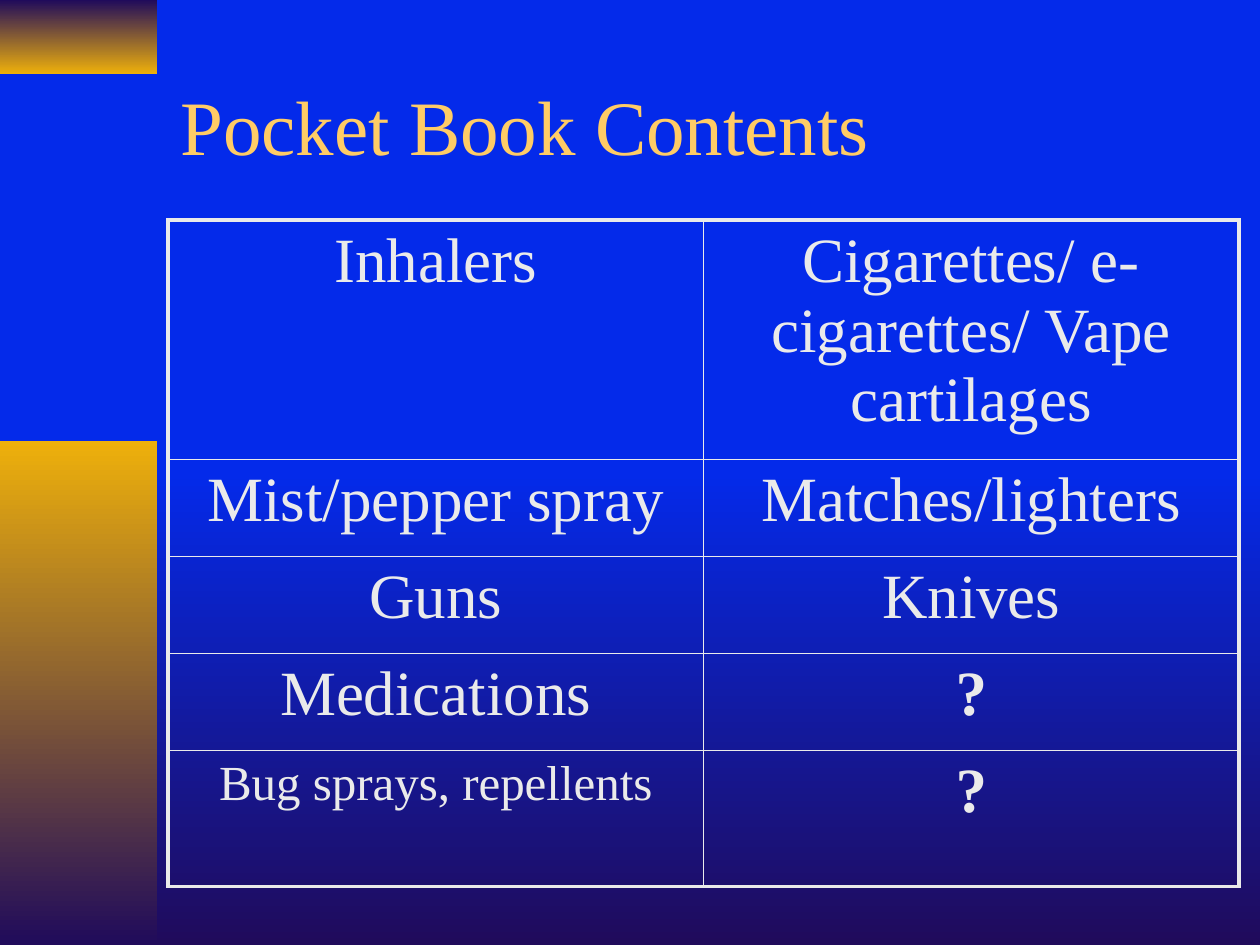
from dataclasses import dataclass

from lxml.etree import SubElement
from pptx import Presentation
from pptx.dml.color import RGBColor
from pptx.enum.shapes import MSO_SHAPE
from pptx.enum.text import MSO_ANCHOR as Anchor, PP_ALIGN as Align
from pptx.oxml.ns import qn
from pptx.util import Emu, Pt

EMU_PER_PX = 914400 / 126


@dataclass(frozen=True)
class Theme:
    font: str = "Times New Roman"
    blue: str = "042AEA"
    navy: str = "200B5B"
    gold: str = "EEB00B"
    title: str = "FFCC66"
    text: str = "EAEAEA"
    title_size: int = 44
    cell_size: int = 36
    small_size: int = 28
    outer_line: float = 2.25
    inner_line: float = 1


def px(length):
    return Emu(round(length * EMU_PER_PX))


class SlideBuilder:
    def __init__(self, slide, theme):
        self.slide = slide
        self.theme = theme

    def gradient(self, fill, element, stops):
        """Fill from top to bottom with (percent, colour) stops."""
        fill.gradient()
        fill.gradient_angle = 270
        stop_list = next(element.iter(qn("a:gsLst")))
        for old_stop in list(stop_list):
            stop_list.remove(old_stop)
        for percent, color in stops:
            stop = SubElement(stop_list, qn("a:gs"), pos=str(percent * 1000))
            SubElement(stop, qn("a:srgbClr"), val=color)

    def background(self, stops):
        self.gradient(self.slide.background.fill, self.slide.element, stops)

    def block(self, left, top, width, height, stops):
        shape = self.slide.shapes.add_shape(
            MSO_SHAPE.RECTANGLE, px(left), px(top), px(width), px(height))
        shape.shadow.inherit = False
        shape.line.fill.background()
        self.gradient(shape.fill, shape.element, stops)

    def format_text(self, paragraph, size, color, bold=False):
        for run in paragraph.runs:
            run.font.name = self.theme.font
            run.font.size = Pt(size)
            run.font.bold = bold
            run.font.color.rgb = RGBColor.from_string(color)

    def title(self, text, left, top, width, height):
        box = self.slide.shapes.add_textbox(px(left), px(top), px(width), px(height))
        frame = box.text_frame
        frame.word_wrap = True
        frame.vertical_anchor = Anchor.MIDDLE
        frame.text = text
        self.format_text(frame.paragraphs[0], self.theme.title_size, self.theme.title)

    def borders(self, cell, outer_sides):
        properties = cell._tc.get_or_add_tcPr()
        for index, side in enumerate("LRTB"):
            width = self.theme.outer_line if side in outer_sides else self.theme.inner_line
            line = properties.makeelement(qn(f"a:ln{side}"), {"w": str(Pt(width))})
            fill = SubElement(line, qn("a:solidFill"))
            SubElement(fill, qn("a:srgbClr"), val=self.theme.text)
            properties.insert(index, line)

    def table(self, rows, left, top, width, heights, small=()):
        row_count, column_count = len(rows), len(rows[0])
        table = self.slide.shapes.add_table(
            row_count, column_count, px(left), px(top), px(width), px(sum(heights))).table
        table.first_row = table.horz_banding = False
        for column in table.columns:
            column.width = px(width / column_count)
        for r, (texts, height) in enumerate(zip(rows, heights)):
            table.rows[r].height = px(height)
            for c, text in enumerate(texts):
                cell = table.cell(r, c)
                cell.fill.background()
                edges = {"L": c == 0, "R": c == column_count - 1,
                         "T": r == 0, "B": r == row_count - 1}
                self.borders(cell, [side for side, outer in edges.items() if outer])
                cell.text_frame.text = text
                paragraph = cell.text_frame.paragraphs[0]
                paragraph.alignment = Align.CENTER
                size = self.theme.small_size if text in small else self.theme.cell_size
                self.format_text(paragraph, size, self.theme.text, bold=text == "?")


def main():
    presentation = Presentation()
    presentation.slide_width, presentation.slide_height = px(1260), px(945)
    theme = Theme()
    builder = SlideBuilder(
        presentation.slides.add_slide(presentation.slide_layouts[6]), theme)

    # Background and side blocks
    builder.background([(0, theme.blue), (50, theme.blue), (100, theme.navy)])
    builder.block(0, 0, 157, 74, [(0, theme.navy), (100, theme.gold)])
    builder.block(0, 441, 157, 504, [(0, theme.gold), (100, theme.navy)])

    # Title
    builder.title("Pocket Book Contents", 168, 42, 1071, 166)

    # Contents table; the first row grows to fit its text
    contents = [
        ("Inhalers", "Cigarettes/ e- cigarettes/ Vape cartilages"),
        ("Mist/pepper spray", "Matches/lighters"),
        ("Guns", "Knives"),
        ("Medications", "?"),
        ("Bug sprays, repellents", "?"),
    ]
    builder.table(contents, 168, 220, 1071, [97, 97, 97, 97, 136],
                  small=("Bug sprays, repellents",))

    presentation.save("out.pptx")


if __name__ == "__main__":
    main()
